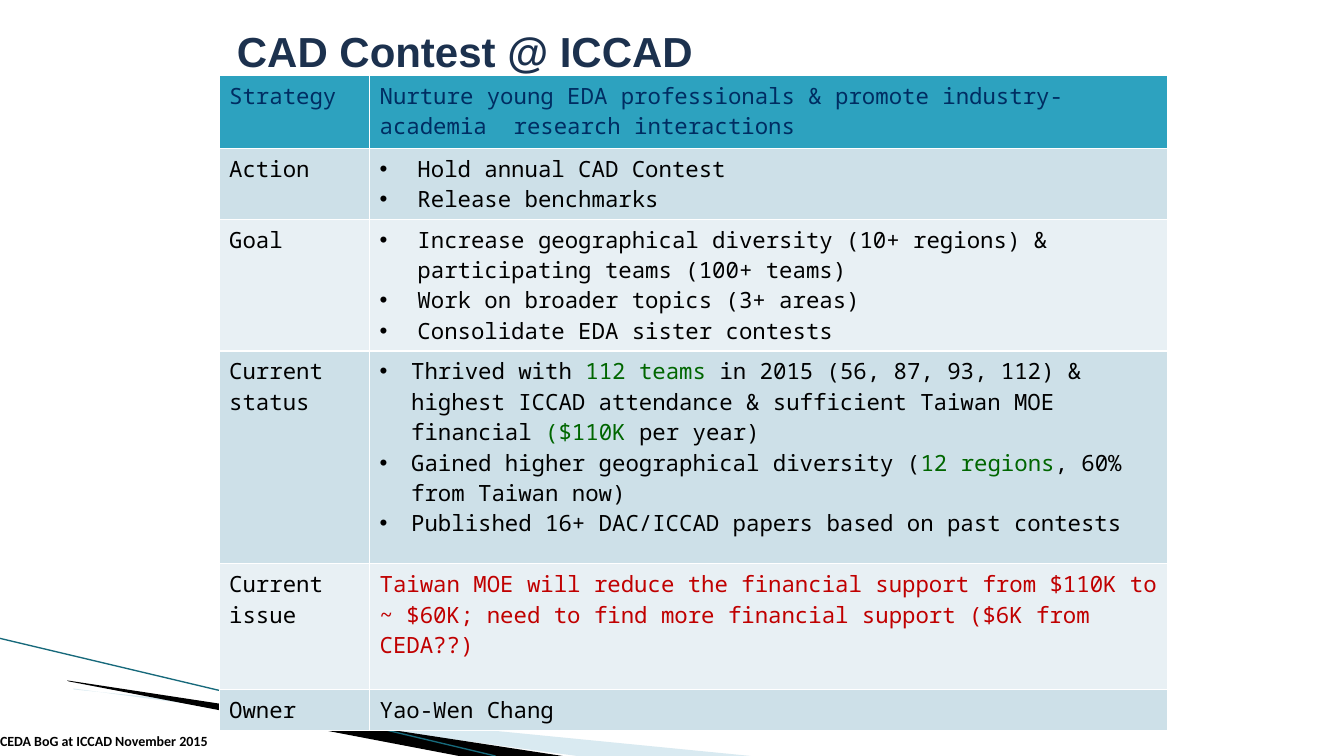
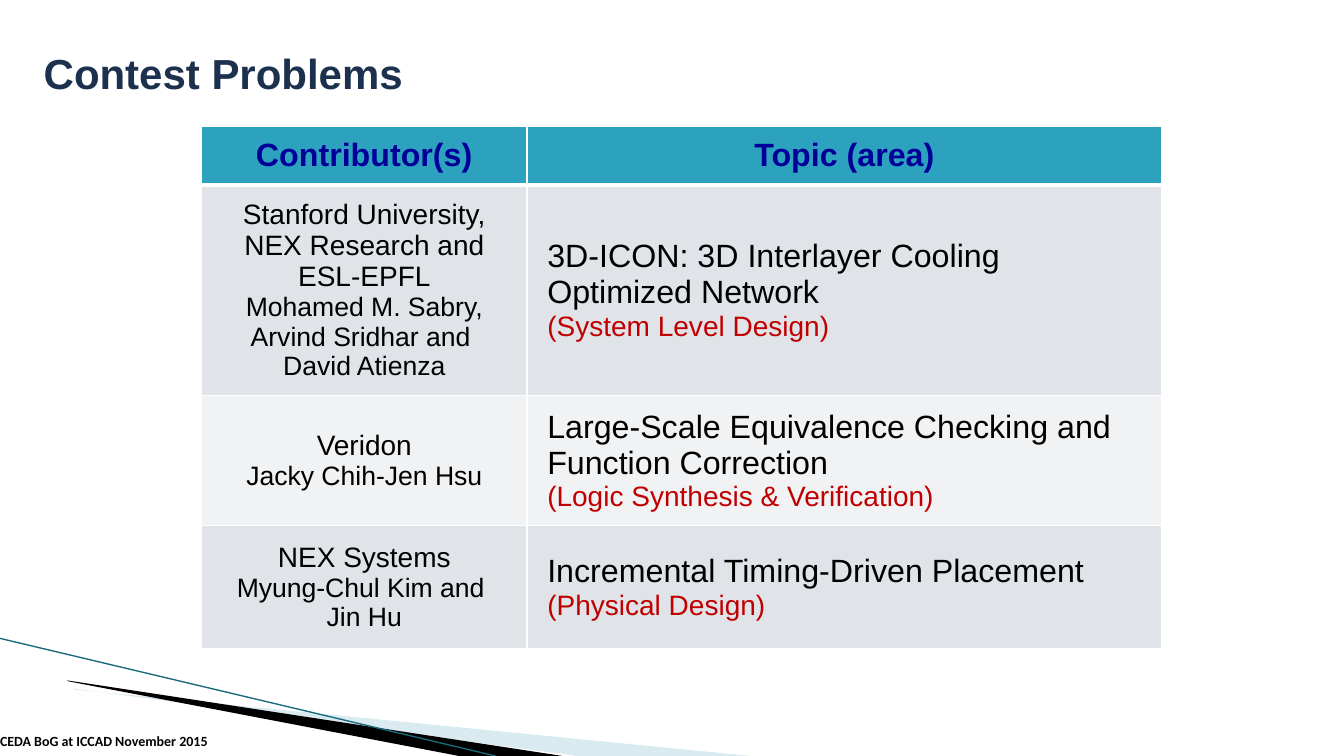
from dataclasses import dataclass
from typing import Any

from lxml import etree
from pptx import Presentation
from pptx.dml.color import RGBColor
from pptx.enum.shapes import MSO_CONNECTOR
from pptx.enum.text import MSO_ANCHOR, PP_ALIGN
from pptx.oxml.ns import qn
from pptx.util import Pt

STRAIGHT = MSO_CONNECTOR.STRAIGHT
TOP, MIDDLE, BOTTOM = MSO_ANCHOR.TOP, MSO_ANCHOR.MIDDLE, MSO_ANCHOR.BOTTOM
LEFT, CENTER = PP_ALIGN.LEFT, PP_ALIGN.CENTER
PAGE_WIDTH, PAGE_HEIGHT = 960, 540
TITLE_ONLY = 5
COLORS = {
    "white": "FFFFFF",
    "black": "000000",
    "title": "1C314E",
    "header": "2DA2BF",
    "wedge": "A0CBDC",
    "rule": "17697B",
    "strategy": "002D62",
    "heading": "000099",
    "green": "006600",
    "red": "C00000",
    "blue_band": "CDE0E8",
    "blue_light": "E8F0F4",
    "gray_band": "E0E4E9",
    "gray_light": "F0F2F4",
}
FOOTER = "CEDA BoG at ICCAD November 2015"


@dataclass(frozen=True)
class Span:
    text: str
    color: str = "black"
    size: float = 16
    bold: bool = False


@dataclass(frozen=True)
class Line:
    spans: tuple[Span, ...]
    indent: float = 0
    align: Any = LEFT


@dataclass(frozen=True)
class Wedge:
    points: tuple[tuple[float, float], ...]
    color: str
    opacity: int


@dataclass(frozen=True)
class Grid:
    left: float
    top: float
    columns: tuple[float, ...]
    heights: tuple[float, ...]
    rows: list[tuple[list[Line], list[Line]]]
    bands: tuple[str, str]
    font: str
    margins: tuple[float, float]
    anchor: Any
    header_rule: float


@dataclass(frozen=True)
class SlideContent:
    title: str
    title_box: tuple[float, float, float, float]
    grid: Grid


WEDGES = (
    Wedge(((52.5, 491.8), (52.5, 492.5), (536, 540), (412, 540)), "wedge", 40),
    Wedge(((48, 486), (402, 540), (328, 540), (49, 486.7)), "black", 100),
)


def rgb(name: str) -> RGBColor:
    return RGBColor.from_string(COLORS[name])


def apply(target: Any, values: dict[str, Any]) -> None:
    for name, value in values.items():
        setattr(target, name, value)


def write_lines(frame: Any, lines: list[Line], font: str) -> None:
    for index, line in enumerate(lines):
        para = frame.paragraphs[0] if index == 0 else frame.add_paragraph()
        para.alignment = line.align
        if line.indent:
            properties = para._p.get_or_add_pPr()
            properties.set("marL", str(Pt(line.indent)))
            properties.set("indent", str(-Pt(line.indent)))
            etree.SubElement(properties, qn("a:buFont")).set("typeface", "Arial")
            etree.SubElement(properties, qn("a:buChar")).set("char", "•")
        for span in line.spans:
            for part, text in enumerate(span.text.split("\n")):
                if part:
                    para.add_line_break()
                run = para.add_run()
                run.text = text
                apply(run.font, {"name": font, "size": Pt(span.size), "bold": span.bold})
                run.font.color.rgb = rgb(span.color)


def add_wedge(page: Any, wedge: Wedge) -> None:
    points = [(Pt(x), Pt(y)) for x, y in wedge.points]
    builder = page.shapes.build_freeform(*points[0], scale=1.0)
    builder.add_line_segments(points[1:], close=True)
    shape = builder.convert_to_shape()
    shape.shadow.inherit = False
    shape.fill.solid()
    shape.fill.fore_color.rgb = rgb(wedge.color)
    shape.line.fill.background()
    if wedge.opacity < 100:
        color = shape.fill._xPr.find(qn("a:solidFill"))[0]
        etree.SubElement(color, qn("a:alpha")).set("val", str(wedge.opacity * 1000))


def add_decoration(page: Any) -> None:
    for wedge in WEDGES:
        add_wedge(page, wedge)
    rule = page.shapes.add_connector(STRAIGHT, Pt(0), Pt(456), Pt(354), Pt(PAGE_HEIGHT))
    rule.line.color.rgb = rgb("rule")
    rule.line.width = Pt(0.95)
    etree.SubElement(rule._element.spPr, qn("a:effectLst"))


def format_title(page: Any, content: SlideContent) -> None:
    box = page.shapes.title
    lengths = [Pt(value) for value in content.title_box]
    apply(box, dict(zip(("left", "top", "width", "height"), lengths)))
    apply(box.text_frame, {"word_wrap": True, "vertical_anchor": MIDDLE})
    write_lines(box.text_frame, [Line((Span(content.title, "title", 30, True),))], "Arial")


def add_footer(page: Any) -> None:
    box = page.shapes.add_textbox(Pt(0), Pt(522), Pt(240), Pt(17))
    apply(box.text_frame, {"word_wrap": True, "vertical_anchor": BOTTOM, "margin_left": 0})
    write_lines(box.text_frame, [Line((Span(FOOTER, size=10, bold=True),))], "Calibri")


def set_borders(cell: Any, top: float, bottom: float) -> None:
    properties = cell._tc.get_or_add_tcPr()
    for side, width in {"lnL": 1, "lnR": 1, "lnT": top, "lnB": bottom}.items():
        border = etree.SubElement(properties, qn(f"a:{side}"), w=str(Pt(width)))
        fill = etree.SubElement(border, qn("a:solidFill"))
        etree.SubElement(fill, qn("a:srgbClr")).set("val", COLORS["white"])


def add_grid(page: Any, grid: Grid) -> None:
    table = page.shapes.add_table(
        len(grid.rows), len(grid.columns), Pt(grid.left), Pt(grid.top),
        Pt(sum(grid.columns)), Pt(sum(grid.heights)),
    ).table
    apply(table, {"first_row": False, "horz_banding": False})
    for column, width in zip(table.columns, grid.columns):
        column.width = Pt(width)
    side, end = (Pt(value) for value in grid.margins)
    cell_format = {
        "margin_left": side, "margin_right": side,
        "margin_top": end, "margin_bottom": end,
        "vertical_anchor": grid.anchor,
    }
    for row, (height, contents) in enumerate(zip(grid.heights, grid.rows)):
        table.rows[row].height = Pt(height)
        fill = grid.bands[(row - 1) % 2] if row else "header"
        top = grid.header_rule if row == 1 else 1
        bottom = grid.header_rule if row == 0 else 1
        for column, lines in enumerate(contents):
            cell = table.cell(row, column)
            apply(cell, cell_format)
            set_borders(cell, top, bottom)
            cell.fill.solid()
            cell.fill.fore_color.rgb = rgb(fill)
            write_lines(cell.text_frame, lines, grid.font)


def plain(text: str, color: str = "black") -> Line:
    return Line((Span(text, color),))


def bullets(indent: float, *texts: str) -> list[Line]:
    return [Line((Span(text),), indent) for text in texts]


def heading(text: str) -> list[Line]:
    return [Line((Span(text, "heading", 23, True),), align=CENTER)]


def problem(group: str, people: str, topic: str, area: str) -> tuple[list[Line], list[Line]]:
    contributor = [
        Line((Span(group, size=20),), align=CENTER),
        Line((Span(people, size=19),), align=CENTER),
    ]
    return contributor, [Line((Span(topic, size=23),)), Line((Span(area, "red", 20),))]


STATUS = [
    Line((
        Span("Thrived with "),
        Span("112 teams ", "green"),
        Span("in 2015 (56, 87, 93, 112) & highest ICCAD attendance & sufficient Taiwan MOE financial "),
        Span("($110K ", "green"),
        Span("per year)"),
    ), 22.5),
    Line((
        Span("Gained higher geographical diversity ("),
        Span("12 regions", "green"),
        Span(", 60% from Taiwan now)"),
    ), 22.5),
    *bullets(22.5, "Published 16+ DAC/ICCAD papers based on past contests"),
]

PLAN = Grid(
    156.5, 54, (107.5, 570), (52, 50.5, 94, 152, 90, 29),
    [
        ([plain("Strategy", "strategy")],
         [plain("Nurture young EDA professionals & promote industry-academia  research interactions",
                "strategy")]),
        ([plain("Action")], bullets(27, "Hold annual CAD Contest", "Release benchmarks")),
        ([plain("Goal")], bullets(
            27,
            "Increase geographical diversity (10+ regions) & participating teams (100+ teams)",
            "Work on broader topics (3+ areas)",
            "Consolidate EDA sister contests",
        )),
        ([plain("Current status")], STATUS),
        ([plain("Current issue")], [
            plain("Taiwan MOE will reduce the financial support from $110K to", "red"),
            plain("~ $60K; need to find more financial support ($6K from CEDA??)", "red"),
        ]),
        ([plain("Owner")], [plain("Yao-Wen Chang")]),
    ],
    ("blue_band", "blue_light"), "Noto Sans Mono", (7.2, 3.6), TOP, 1,
)

PROBLEMS = Grid(
    144, 90.5, (232.5, 453.5), (41.5, 150.5, 93, 88),
    [
        (heading("Contributor(s)"), heading("Topic (area)")),
        problem("Stanford University, NEX Research and ESL-EPFL",
                "Mohamed M. Sabry, Arvind Sridhar and \nDavid Atienza",
                "3D-ICON: 3D Interlayer Cooling Optimized Network", "(System Level Design)"),
        problem("Veridon", "Jacky Chih-Jen Hsu",
                "Large-Scale Equivalence Checking and Function Correction",
                "(Logic Synthesis & Verification)"),
        problem("NEX Systems", "Myung-Chul Kim and \nJin Hu",
                "Incremental Timing-Driven Placement", "(Physical Design)"),
    ],
    ("gray_band", "gray_light"), "Arial", (14.4, 7.2), MIDDLE, 3,
)

SLIDES = (
    SlideContent("CAD Contest @ ICCAD", (162, 11.5, 619, 49), PLAN),
    SlideContent("Contest Problems", (24, 18, 744, 68.5), PROBLEMS),
)


def main() -> None:
    deck = Presentation()
    apply(deck, {"slide_width": Pt(PAGE_WIDTH), "slide_height": Pt(PAGE_HEIGHT)})
    for content in SLIDES:
        page = deck.slides.add_slide(deck.slide_layouts[TITLE_ONLY])
        add_decoration(page)
        format_title(page, content)
        add_grid(page, content.grid)
        add_footer(page)
    deck.save("out.pptx")


if __name__ == "__main__":
    main()
